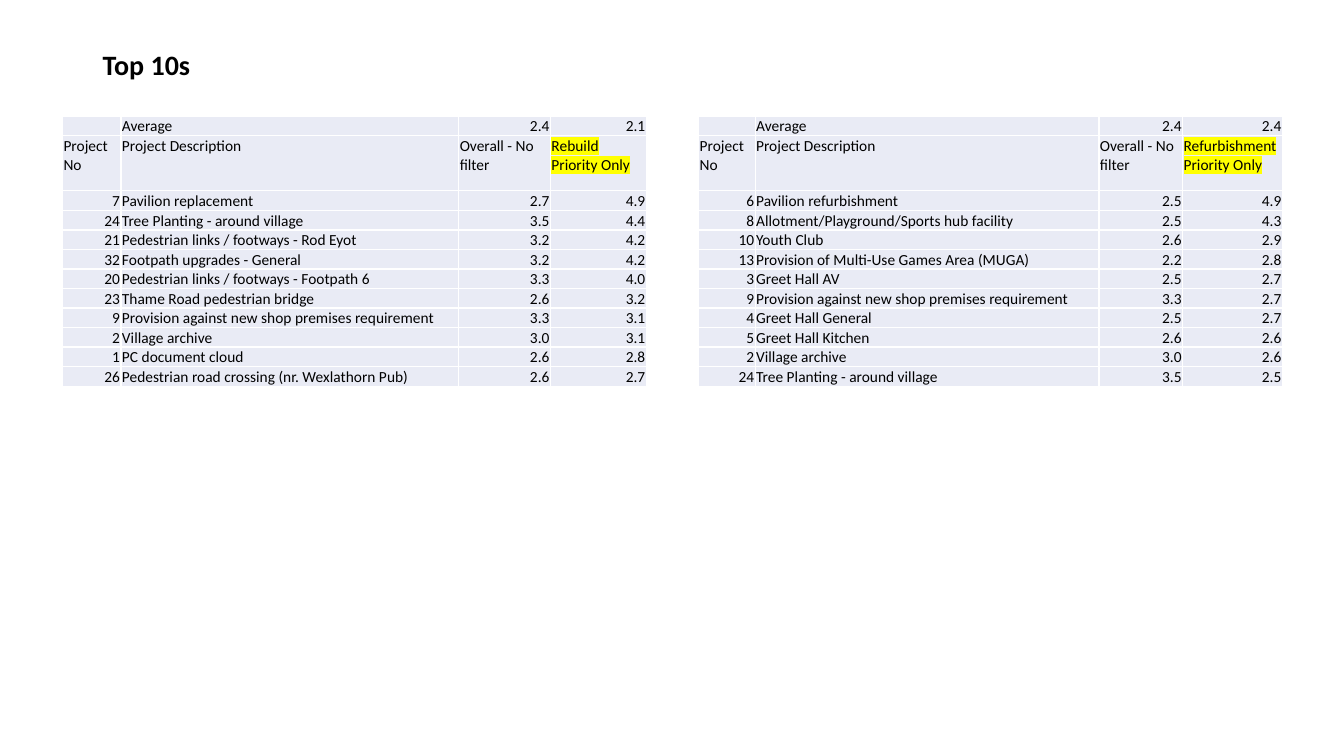
from dataclasses import dataclass

from lxml import etree
from pptx import Presentation
from pptx.dml.color import RGBColor
from pptx.enum import text as t
from pptx.oxml import ns
from pptx.util import Inches, Pt


@dataclass(frozen=True)
class Theme:
    font: str = "Calibri"
    ink: str = "000000"
    cell: str = "E9EBF5"
    border: str = "FFFFFF"
    highlight: str = "FFFF00"
    title_size: int = 20
    table_size: int = 11
    border_width: int = 1


THEME = Theme()
TABLE_TOP, TABLE_WIDTH = 1.15, 5.79
ROW_HEIGHT, HEADER_HEIGHT = 0.18, 0.55

REBUILD = [
    (7, "Pavilion replacement", 2.7, 4.9),
    (24, "Tree Planting - around village", 3.5, 4.4),
    (21, "Pedestrian links / footways - Rod Eyot", 3.2, 4.2),
    (32, "Footpath upgrades - General", 3.2, 4.2),
    (20, "Pedestrian links / footways - Footpath 6", 3.3, 4.0),
    (23, "Thame Road pedestrian bridge", 2.6, 3.2),
    (9, "Provision against new shop premises requirement", 3.3, 3.1),
    (2, "Village archive", 3.0, 3.1),
    (1, "PC document cloud", 2.6, 2.8),
    (26, "Pedestrian road crossing (nr. Wexlathorn Pub)", 2.6, 2.7),
]
REFURBISHMENT = [
    (6, "Pavilion refurbishment", 2.5, 4.9),
    (8, "Allotment/Playground/Sports hub facility", 2.5, 4.3),
    (10, "Youth Club", 2.6, 2.9),
    (13, "Provision of Multi-Use Games Area (MUGA)", 2.2, 2.8),
    (3, "Greet Hall AV", 2.5, 2.7),
    (9, "Provision against new shop premises requirement", 3.3, 2.7),
    (4, "Greet Hall General", 2.5, 2.7),
    (5, "Greet Hall Kitchen", 2.6, 2.6),
    (2, "Village archive", 3.0, 2.6),
    (24, "Tree Planting - around village", 3.5, 2.5),
]


def write(frame, words, *, size, bold=False, align=t.PP_ALIGN.LEFT, spacing=None, highlight=None):
    paragraph = frame.paragraphs[0]
    paragraph.alignment = align
    paragraph.line_spacing = spacing
    if not words:
        # An empty cell still takes its height from the end-of-paragraph size.
        etree.SubElement(paragraph._p, ns.qn("a:endParaRPr"), sz=str(size * 100))
        return
    run = paragraph.add_run()
    run.text = words
    font = run.font
    font.name, font.size, font.bold = THEME.font, Pt(size), bold
    font.color.rgb = RGBColor.from_string(THEME.ink)
    if highlight:
        marker = etree.Element(ns.qn("a:highlight"))
        etree.SubElement(marker, ns.qn("a:srgbClr"), val=highlight)
        run._r.rPr.find(ns.qn("a:solidFill")).addnext(marker)


def add_title(slide, words):
    box = slide.shapes.add_textbox(Inches(0.92), Inches(0.4), Inches(11.5), Inches(0.52))
    box.text_frame.word_wrap = True
    box.text_frame.vertical_anchor = t.MSO_ANCHOR.MIDDLE
    write(box.text_frame, words, size=THEME.title_size, bold=True, spacing=0.9)


def style_cell(cell, anchor):
    cell.margin_left = cell.margin_right = cell.margin_top = Inches(0.01)
    cell.margin_bottom = 0
    cell.vertical_anchor = anchor
    cell.fill.solid()
    cell.fill.fore_color.rgb = RGBColor.from_string(THEME.cell)
    properties = cell._tc.get_or_add_tcPr()
    for position, side in enumerate(("lnL", "lnR", "lnT", "lnB")):
        border = etree.Element(ns.qn(f"a:{side}"), w=str(Pt(THEME.border_width)))
        fill = etree.SubElement(border, ns.qn("a:solidFill"))
        etree.SubElement(fill, ns.qn("a:srgbClr"), val=THEME.border)
        properties.insert(position, border)


def add_ranking(slide, left, widths, averages, priority, projects):
    """Add a table of averages, headings and the ten best-scored projects."""
    headings = ("Project No", "Project Description", "Overall - No filter", f"{priority} Priority Only")
    rows = [("", "Average", *averages), headings, *projects]
    heights = [ROW_HEIGHT, HEADER_HEIGHT] + [ROW_HEIGHT] * len(projects)
    table = slide.shapes.add_table(
        len(rows), len(headings), Inches(left), Inches(TABLE_TOP),
        Inches(TABLE_WIDTH), Inches(sum(heights)),
    ).table
    table.first_row = table.horz_banding = False
    for column, width in zip(table.columns, widths):
        column.width = Inches(width)
    for row, height, values in zip(table.rows, heights, rows):
        row.height = Inches(height)
        is_header = values is headings
        for cell, value in zip(row.cells, values):
            style_cell(cell, t.MSO_ANCHOR.TOP if is_header else t.MSO_ANCHOR.BOTTOM)
            is_text = isinstance(value, str)
            write(
                cell.text_frame, str(value), size=THEME.table_size,
                align=t.PP_ALIGN.LEFT if is_text else t.PP_ALIGN.RIGHT,
                highlight=THEME.highlight if is_header and value == headings[-1] else None,
            )


def main():
    deck = Presentation()
    deck.slide_width, deck.slide_height = Inches(13.33), Inches(7.5)
    slide = deck.slides.add_slide(deck.slide_layouts[6])
    add_title(slide, "Top 10s")
    add_ranking(slide, 6.93, (0.56, 3.41, 0.83, 0.99), (2.4, 2.4), "Refurbishment", REFURBISHMENT)
    add_ranking(slide, 0.62, (0.58, 3.35, 0.91, 0.95), (2.4, 2.1), "Rebuild", REBUILD)
    deck.save("out.pptx")


if __name__ == "__main__":
    main()
